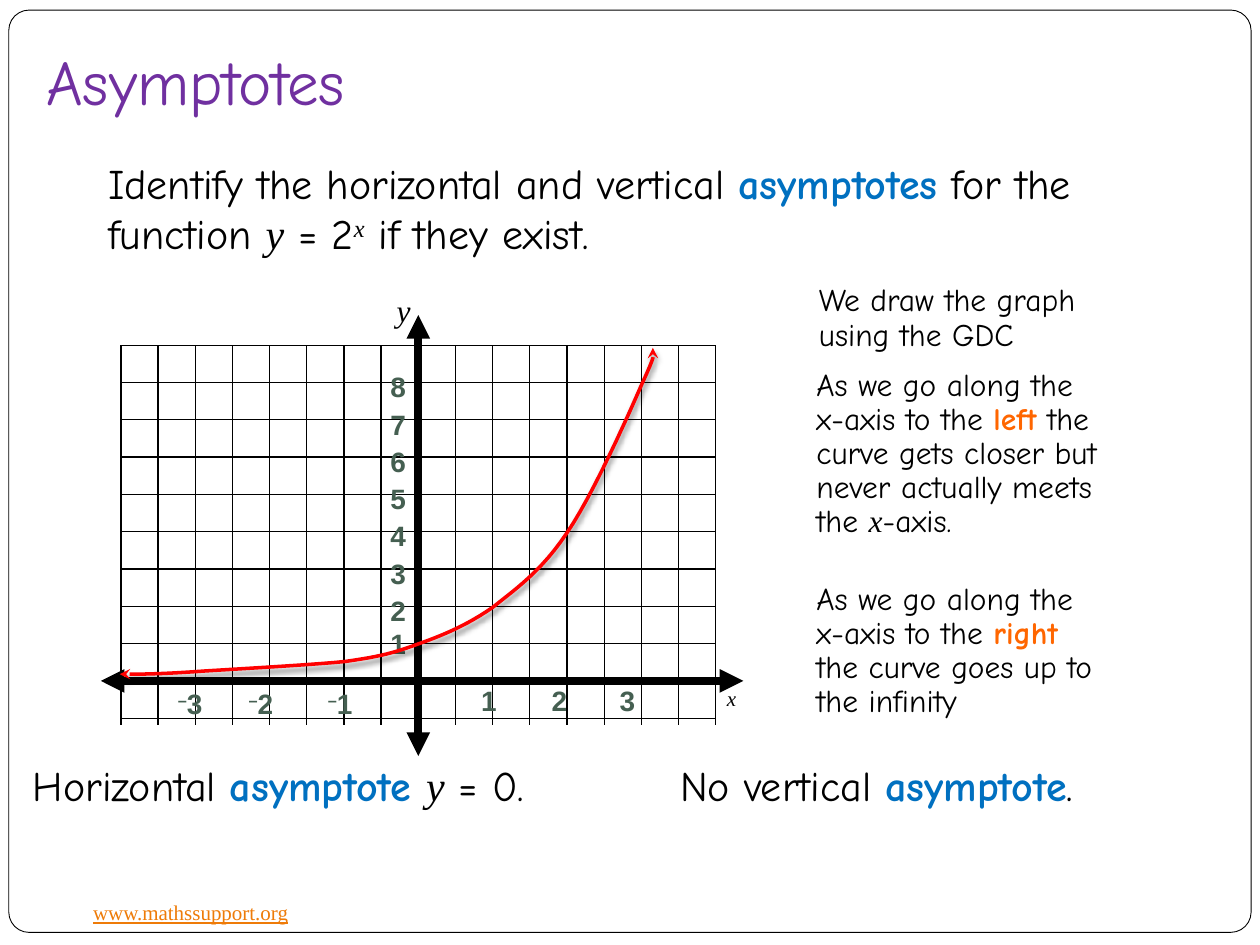
from dataclasses import dataclass, replace

from lxml import etree
from pptx import Presentation
from pptx.dml.color import RGBColor
from pptx.enum.shapes import MSO_CONNECTOR, MSO_SHAPE
from pptx.enum.text import MSO_ANCHOR, PP_ALIGN
from pptx.oxml.ns import qn
from pptx.util import Emu, Inches, Pt

BLACK = RGBColor(0x00, 0x00, 0x00)
WHITE = RGBColor(0xFF, 0xFF, 0xFF)
PURPLE = RGBColor(0x70, 0x30, 0xA0)
BLUE = RGBColor(0x00, 0x70, 0xC0)
ORANGE = RGBColor(0xFF, 0x66, 0x00)
LINK = RGBColor(0xEE, 0x7B, 0x08)
GREEN = RGBColor(0x45, 0x5F, 0x51)
RED = RGBColor(0xFF, 0x00, 0x00)

COMIC, TIMES, ARIAL = "Comic Neue", "Times New Roman", "Arial"
TOP, BOTTOM = MSO_ANCHOR.TOP, MSO_ANCHOR.BOTTOM
LEFT, CENTER = PP_ALIGN.LEFT, PP_ALIGN.CENTER
STRAIGHT = MSO_CONNECTOR.STRAIGHT
RECT, ROUNDED = MSO_SHAPE.RECTANGLE, MSO_SHAPE.ROUNDED_RECTANGLE

SLIDE_COLS, SLIDE_ROWS = 100, 75
UNIT = Inches(10) / SLIDE_COLS
GRID_COLS, GRID_ROWS = 16, 10
AXIS_COL, AXIS_ROW = 8, 9
STEPS = 12
NOTE_INSETS = (0.8, 0.4, 0.8, 0.4)


@dataclass(frozen=True)
class Run:
    text: str
    color: RGBColor = BLACK
    font: str = COMIC
    bold: bool = False
    italic: bool = False
    underline: bool = False
    raised: bool = False


@dataclass(frozen=True)
class Box:
    left: float
    top: float
    width: float
    height: float


@dataclass(frozen=True)
class Note:
    box: Box
    size: int
    runs: list[Run]


def units(value: float) -> Emu:
    return Emu(round(value * UNIT))


def place(box: Box) -> list[Emu]:
    return [units(v) for v in (box.left, box.top, box.width, box.height)]


def grid_x(col: float) -> float:
    return 9.6 + 2.95 * col


def grid_y(row: float) -> float:
    return 27.4 + 2.96 * row


def variable(name: str, raised: bool = False) -> Run:
    return Run(name, font=TIMES, italic=True, raised=raised)


def key(text: str, color: RGBColor = BLUE) -> Run:
    return Run(text, color, bold=True)


def add_text(slide, box: Box, runs: list[Run], *, size: int, anchor=TOP, align=LEFT,
             insets=(1, 0.5, 1, 0.5), spacing: float = 1, wrap: bool = True) -> None:
    tf = slide.shapes.add_textbox(*place(box)).text_frame
    tf.word_wrap = wrap
    tf.vertical_anchor = anchor
    tf.margin_left, tf.margin_top, tf.margin_right, tf.margin_bottom = map(units, insets)
    p = tf.paragraphs[0]
    p.alignment = align
    p.line_spacing = spacing
    for run in runs:
        r = p.add_run()
        r.text = run.text
        r.font.size = Pt(size)
        r.font.name = run.font
        r.font.color.rgb = run.color
        r.font.bold = run.bold
        r.font.italic = run.italic
        r.font.underline = run.underline
        if run.raised:
            r.font._element.set("baseline", "30000")


def add_panel(slide, kind, box: Box):
    s = slide.shapes.add_shape(kind, *place(box))
    s.shadow.inherit = False
    s.fill.solid()
    s.fill.fore_color.rgb = WHITE
    s.line.fill.background()
    return s


def set_line(s, color: RGBColor, width: float, arrow: str = "") -> None:
    s.line.color.rgb = color
    s.line.width = Pt(width)
    if arrow:
        ln = s.line._get_or_add_ln()
        for end in ("a:headEnd", "a:tailEnd"):
            etree.SubElement(ln, qn(end), type=arrow)


def add_line(slide, x1: float, y1: float, x2: float, y2: float,
             width: float = 0.75, arrow: str = "") -> None:
    s = slide.shapes.add_connector(STRAIGHT, *map(units, (x1, y1, x2, y2)))
    set_line(s, BLACK, width, arrow)
    etree.SubElement(s._element.spPr, qn("a:effectLst"))


def bezier(a: float, b: float, c: float, d: float, t: float) -> float:
    u = 1 - t
    return a * u**3 + 3 * b * u * u * t + 3 * c * u * t * t + d * t**3


def add_curve(slide, knots: list[tuple[float, float]]) -> None:
    points = [(grid_x(col), grid_y(row)) for col, row in knots]
    trace = [
        tuple(units(bezier(*axis, step / STEPS)) for axis in zip(*points[i:i + 4]))
        for i in range(0, len(points) - 1, 3)
        for step in range(1, STEPS + 1)
    ]
    builder = slide.shapes.build_freeform(*map(units, points[0]))
    builder.add_line_segments(trace, close=False)
    s = builder.convert_to_shape()
    s.fill.background()
    set_line(s, RED, 2, "stealth")
    s.shadow.inherit = False
    effects = s._element.spPr.find(qn("a:effectLst"))
    shadow = etree.SubElement(effects, qn("a:outerShdw"), blurRad=str(Pt(3)),
                              dist=str(Pt(2)), dir="5400000", rotWithShape="0")
    black = etree.SubElement(shadow, qn("a:srgbClr"), val=str(BLACK))
    etree.SubElement(black, qn("a:alpha"), val="50000")


def add_graph(slide) -> None:
    add_panel(slide, RECT, Box(30.5, 22.6, 3.5, 4.8))
    add_text(slide, Box(30.5, 22.6, 3.5, 4.8), [variable("y")], size=18)
    for col in range(GRID_COLS + 1):
        add_line(slide, grid_x(col), grid_y(0), grid_x(col), 57.5)
    for row in range(GRID_ROWS + 1):
        add_line(slide, grid_x(0), grid_y(row), grid_x(GRID_COLS), grid_y(row))
    add_line(slide, grid_x(AXIS_COL), 25, grid_x(AXIS_COL), 60, 4.5, "triangle")
    add_line(slide, 8, grid_y(AXIS_ROW), 59, grid_y(AXIS_ROW), 4.5, "triangle")
    add_text(slide, Box(56.7, 53.9, 4.8, 5.3), [variable("x")], size=12)

    digit = Run("", GREEN, ARIAL, bold=True)
    for n in range(1, AXIS_ROW):
        top = min(grid_y(AXIS_ROW - n) - 1.5, 49.2)
        add_text(slide, Box(30, top, 4, 3.7), [replace(digit, text=str(n))], size=16)
    centers = {-3: 15.1, -2: 20.7, -1: 27, 1: 38.8, 2: 44.4, 3: 49.8}
    for n, center in centers.items():
        sign = [replace(digit, text="–", raised=True)] if n < 0 else []
        top = 54 if n < 0 else 53.8
        add_text(slide, Box(center - 2.5, top, 5, 3.7),
                 sign + [replace(digit, text=str(abs(n)))], size=16, align=CENTER)

    add_curve(slide, [
        (-0.03, 8.82), (0.51, 8.82), (1.02, 8.82), (2.03, 8.75),
        (3.05, 8.68), (5.02, 8.58), (6.03, 8.48),
        (7.02, 8.34), (7.36, 8.24), (8, 8.01),
        (8.68, 7.77), (9.32, 7.5), (10, 7.03),
        (10.64, 6.52), (11.32, 6.05), (12, 5.03),
        (12.68, 4.05), (13.66, 1.86), (14.03, 1.01),
        (14.41, 0.2), (14.37, 0.14), (14.31, 0.07),
    ])


NOTES = [
    Note(Box(64.2, 22.2, 25.7, 6.6), 18, [Run("We draw the graph using the GDC")]),
    Note(Box(64, 28.9, 24.5, 13.5), 18, [
        Run("As we go along the x-axis to the "), key("left", ORANGE),
        Run(" the curve gets closer but never actually meets the "),
        variable("x"), Run("-axis.")]),
    Note(Box(64, 45.9, 24.5, 11.6), 18, [
        Run("As we go along the x-axis to the "), key("right", ORANGE),
        Run(" the curve goes up to the infinity")]),
    Note(Box(1.8, 60.3, 45.1, 4.8), 24, [
        Run("Horizontal "), key("asymptote "), variable("y"), Run(" = 0.")]),
    Note(Box(53.2, 60.3, 39.3, 4.8), 24, [
        Run("No vertical "), key("asymptote"), Run(".")]),
]


def main() -> None:
    prs = Presentation()
    prs.slide_width, prs.slide_height = units(SLIDE_COLS), units(SLIDE_ROWS)
    slide = prs.slides.add_slide(prs.slide_layouts[6])
    frame = add_panel(slide, ROUNDED, Box(0.7, 0.8, 98.6, 73.2))
    frame.adjustments[0] = 0.022
    set_line(frame, BLACK, 0.5)
    add_text(slide, Box(6.4, 70.9, 17.7, 3),
             [Run("www.mathssupport.org", LINK, TIMES, underline=True)], size=12, wrap=False)
    add_text(slide, Box(2.7, 2.2, 80, 8.2), [Run("Asymptotes", PURPLE)],
             size=36, anchor=BOTTOM, insets=(1, 0.5, 1, 1))
    add_text(slide, Box(7.6, 12, 86.6, 8.2), [
        Run("Identify the horizontal and vertical "), key("asymptotes"),
        Run(" for the function "), variable("y"), Run(" = 2"),
        variable("x", raised=True), Run(" if they exist.")], size=24)
    add_graph(slide)
    for note in NOTES:
        add_text(slide, note.box, note.runs, size=note.size, insets=NOTE_INSETS, spacing=0.9)
    prs.save("out.pptx")


if __name__ == "__main__":
    main()
